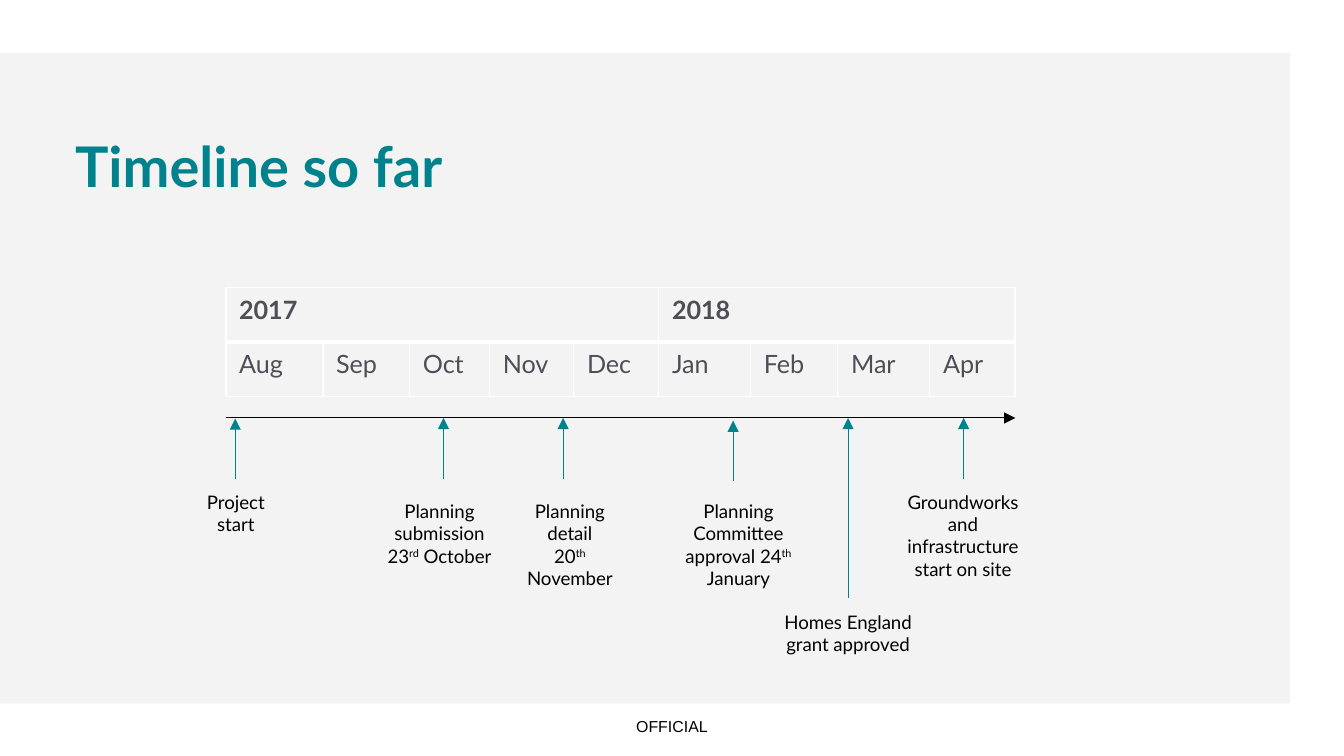
from lxml import etree
from pptx import Presentation
from pptx import util as u
from pptx.dml.color import RGBColor
from pptx.enum import shapes, text
from pptx.oxml.ns import qn

COLORS = {"white": "FFFFFF", "panel": "F2F3F2", "teal": "00828D",
          "black": "000000", "slate": "4F4E56"}
TITLE = "Timeline so far"
MARKING = "OFFICIAL"
YEARS = [("2017", 5), ("2018", 4)]
MONTHS = [("Aug", 7.22), ("Sep", 6.45), ("Oct", 5.95), ("Nov", 6.27), ("Dec", 6.33),
          ("Jan", 6.82), ("Feb", 6.5), ("Mar", 6.85), ("Apr", 6.33)]
AXIS = {"left": 16.8, "right": 75.55, "top": 31.1}
ROW = 4.05
EVENTS = [
    {"arrow": (17.5, 31.15, 35.65), "label": (13.6, 36, 7.9, 4.4),
     "lines": [["Project start"]]},
    {"arrow": (33, 31.1, 35.65), "label": (27.4, 36.7, 10.6, 6.1),
     "lines": [["Planning submission"], ["23", "rd", " October"]]},
    {"arrow": (41.9, 31.1, 35.65), "label": (37.5, 36.7, 9.8, 7.7),
     "lines": [["Planning detail"], ["20", "th", " November"]]},
    {"arrow": (54.55, 31.3, 35.8), "label": (49.65, 36.7, 10.6, 7.7),
     "lines": [["Planning Committee"], ["approval 24", "th", " January"]]},
    {"arrow": (71.7, 31.1, 35.65), "label": (65.8, 36, 11.7, 7.7),
     "lines": [["Groundworks and infrastructure start on site"]]},
    {"arrow": (63.1, 31.1, 44.5), "label": (57.25, 44.95, 11.7, 7.7),
     "lines": [["Homes England grant approved"]]},
]

deck = Presentation()
deck.slide_width = u.Inches(10)
deck.slide_height = u.Emu(deck.slide_width * 9 // 16)
page = deck.slides.add_slide(deck.slide_layouts[6])


def share(*values):
    return [u.Emu(round(value * deck.slide_width / 100)) for value in values]


def color(name):
    return RGBColor.from_string(COLORS[name])


def write(para, runs, size, ink, name="Lato", bold=False):
    for index, words in enumerate(runs):
        span = para.add_run()
        span.text = words
        for key, value in {"size": u.Pt(size), "name": name, "bold": bold}.items():
            setattr(span.font, key, value)
        span.font.color.rgb = color(ink)
        if index == 1:
            span._r.get_or_add_rPr().set("baseline", "30000")


def add_text(place, lines, size, ink, align=text.PP_ALIGN.CENTER, inset=None, spacing=None, **style):
    frame = page.shapes.add_textbox(*share(*place)).text_frame
    frame.word_wrap = True
    if inset is not None:
        for side in ("left", "top", "right", "bottom"):
            setattr(frame, f"margin_{side}", inset)
    for index, runs in enumerate(lines):
        para = frame.add_paragraph() if index else frame.paragraphs[0]
        para.alignment = align
        para.line_spacing = spacing
        write(para, runs, size, ink, **style)


def add_arrow(ends, ink):
    arrow = page.shapes.add_connector(shapes.MSO_CONNECTOR.STRAIGHT, *share(*ends))
    arrow.line.color.rgb = color(ink)
    arrow.line.width = u.Pt(0.5)
    etree.SubElement(arrow.line._get_or_add_ln(), qn("a:tailEnd"), type="triangle")
    etree.SubElement(arrow._element.spPr, qn("a:effectLst"))


def set_borders(cell, bottom):
    props = cell._tc.get_or_add_tcPr()
    widths = {"lnL": 1, "lnR": 1, "lnT": 1, "lnB": bottom}
    for position, (tag, width) in enumerate(widths.items()):
        border = etree.Element(qn(f"a:{tag}"), w=str(u.Pt(width)))
        fill = etree.SubElement(border, qn("a:solidFill"))
        etree.SubElement(fill, qn("a:srgbClr"), val=COLORS["white"])
        props.insert(position, border)


def add_calendar():
    widths = [width for _, width in MONTHS]
    place = share(AXIS["left"], 21.4, sum(widths), 2 * ROW)
    table = page.shapes.add_table(2, len(MONTHS), *place).table
    for column, width in zip(table.columns, share(*widths)):
        column.width = width
    for row in table.rows:
        row.height = share(ROW)[0]
    for cell in table.iter_cells():
        cell.fill.background()
    for index in range(len(MONTHS)):
        set_borders(table.cell(0, index), 3)
        set_borders(table.cell(1, index), 1)
    first = 0
    for year, count in YEARS:
        cell = table.cell(0, first)
        cell.merge(table.cell(0, first + count - 1))
        write(cell.text_frame.paragraphs[0], [year], 13.5, "slate", bold=True)
        first += count
    for index, (month, _) in enumerate(MONTHS):
        write(table.cell(1, index).text_frame.paragraphs[0], [month], 13.5, "slate")


add_text((0, 52.8, 100, 2.4), [[MARKING]], 8.5, "black", name="Arial")
panel = page.shapes.add_shape(shapes.MSO_SHAPE.RECTANGLE, *share(0, 3.95, 96, 48.4))
panel.shadow.inherit = False
panel.fill.solid()
panel.fill.fore_color.rgb = color("panel")
panel.line.fill.background()
add_text((5.6, 10.6, 75.7, 7.5), [[TITLE]], 30, "teal", align=text.PP_ALIGN.LEFT,
         inset=0, spacing=u.Pt(30), bold=True)
add_arrow((AXIS["left"], AXIS["top"], AXIS["right"], AXIS["top"]), "black")
for event in EVENTS:
    x, tip, base = event["arrow"]
    add_arrow((x, base, x, tip), "teal")
    add_text(event["label"], event["lines"], 10, "black")
add_calendar()

deck.save("out.pptx")
